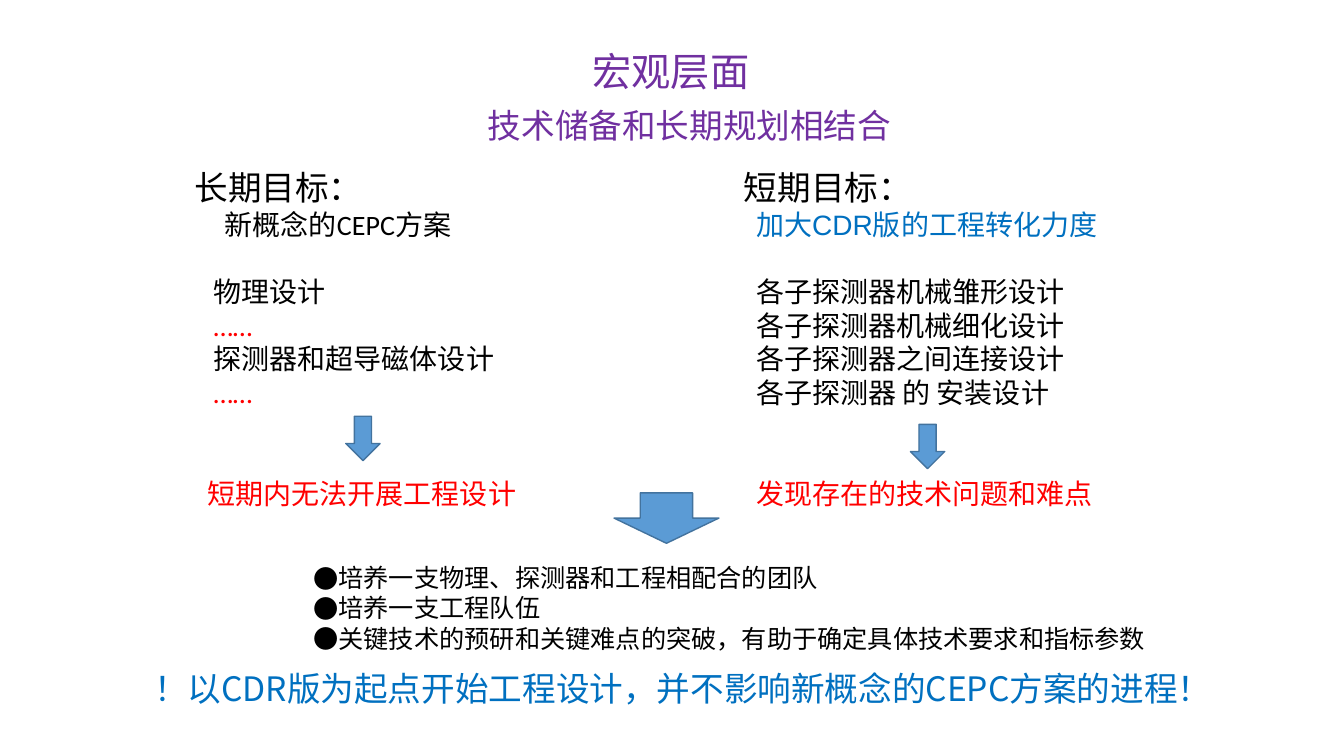
from lxml.etree import SubElement
from pptx import Presentation
from pptx.dml.color import RGBColor
from pptx.enum.shapes import MSO_SHAPE as Shape
from pptx.oxml.ns import qn
from pptx.util import Inches, Pt

COLORS = {
    "purple": "7030A0",
    "black": "000000",
    "red": "FF0000",
    "blue": "0070C0",
    "arrow": "5B9BD5",
    "outline": "43739E",
}
CJK_FONT = "Noto Sans CJK SC"


def color(name):
    return RGBColor.from_string(COLORS[name])


def line(text, size=20, tint="black", indent=0, before=0, bullet=None):
    return {"text": text, "size": size, "tint": tint, "indent": indent,
            "before": before, "bullet": bullet}


class SlideBuilder:
    def __init__(self, presentation):
        self.slide = presentation.slides.add_slide(presentation.slide_layouts[6])

    def text(self, left, top, width, height, lines, font="Calibri"):
        box = self.slide.shapes.add_textbox(
            Inches(left), Inches(top), Inches(width), Inches(height))
        frame = box.text_frame
        frame.word_wrap = True
        for index, item in enumerate(lines):
            paragraph = frame.add_paragraph() if index else frame.paragraphs[0]
            self.paragraph(paragraph, item, font)

    def paragraph(self, paragraph, item, font):
        paragraph.space_before = Pt(item["before"])
        run = paragraph.add_run()
        run.text = item["text"]
        run.font.name = font
        run.font.size = Pt(item["size"])
        run.font.color.rgb = color(item["tint"])
        properties = paragraph._p.get_or_add_pPr()
        properties.set("marL", str(Inches(item["indent"])))
        if item["bullet"]:
            properties.set("indent", str(-Inches(item["indent"])))
            SubElement(properties, qn("a:buFont"), typeface=CJK_FONT)
            SubElement(properties, qn("a:buChar"), char=item["bullet"])

    def arrow(self, left, top, width, height):
        shape = self.slide.shapes.add_shape(
            Shape.DOWN_ARROW, Inches(left), Inches(top), Inches(width), Inches(height))
        shape.shadow.inherit = False
        shape.fill.solid()
        shape.fill.fore_color.rgb = color("arrow")
        shape.line.color.rgb = color("outline")
        shape.line.width = Pt(1)


def main():
    presentation = Presentation()
    presentation.slide_width = Inches(13.33)
    presentation.slide_height = Inches(7.5)
    builder = SlideBuilder(presentation)

    builder.text(5.78, 0.42, 1.77, 0.57, [line("宏观层面", 28, "purple")], CJK_FONT)
    builder.text(4.74, 0.99, 4.24, 0.5, [line("技术储备和长期规划相结合", 24, "purple")])

    builder.text(1.83, 1.61, 3.48, 3.53, [
        line("长期目标：", 24),
        line("新概念的CEPC方案", indent=0.3),
        line("物理设计", indent=0.19, before=24),
        line("……", tint="red", indent=0.19),
        line("探测器和超导磁体设计", indent=0.19),
        line("……", tint="red", indent=0.19),
        line("短期内无法开展工程设计", tint="red", indent=0.13, before=48),
    ])

    design_steps = ["机械雏形设计", "机械细化设计", "之间连接设计", " 的 安装设计"]
    builder.text(7.28, 1.61, 3.85, 3.53, [
        line("短期目标：", 24),
        line("加大CDR版的工程转化力度", tint="blue", indent=0.12),
        *[line("各子探测器" + step, indent=0.12, before=0 if index else 24)
          for index, step in enumerate(design_steps)],
        line("发现存在的技术问题和难点", tint="red", indent=0.12, before=48),
    ], "Arial")

    builder.arrow(3.43, 4.13, 0.34, 0.44)
    builder.arrow(9.03, 4.21, 0.34, 0.44)

    benefits = [
        "培养一支物理、探测器和工程相配合的团队",
        "培养一支工程队伍",
        "关键技术的预研和关键难点的突破，有助于确定具体技术要求和指标参数",
    ]
    builder.text(3.01, 5.53, 8.53, 1.01,
                 [line(benefit, 18, indent=0.25, bullet="●") for benefit in benefits])
    builder.arrow(6.09, 4.89, 1.04, 0.5)

    builder.text(1.43, 6.58, 10.47, 0.5, [
        line("！以CDR版为起点开始工程设计，并不影响新概念的CEPC方案的进程！", 24, "blue"),
    ], CJK_FONT)

    presentation.save("out.pptx")


if __name__ == "__main__":
    main()
